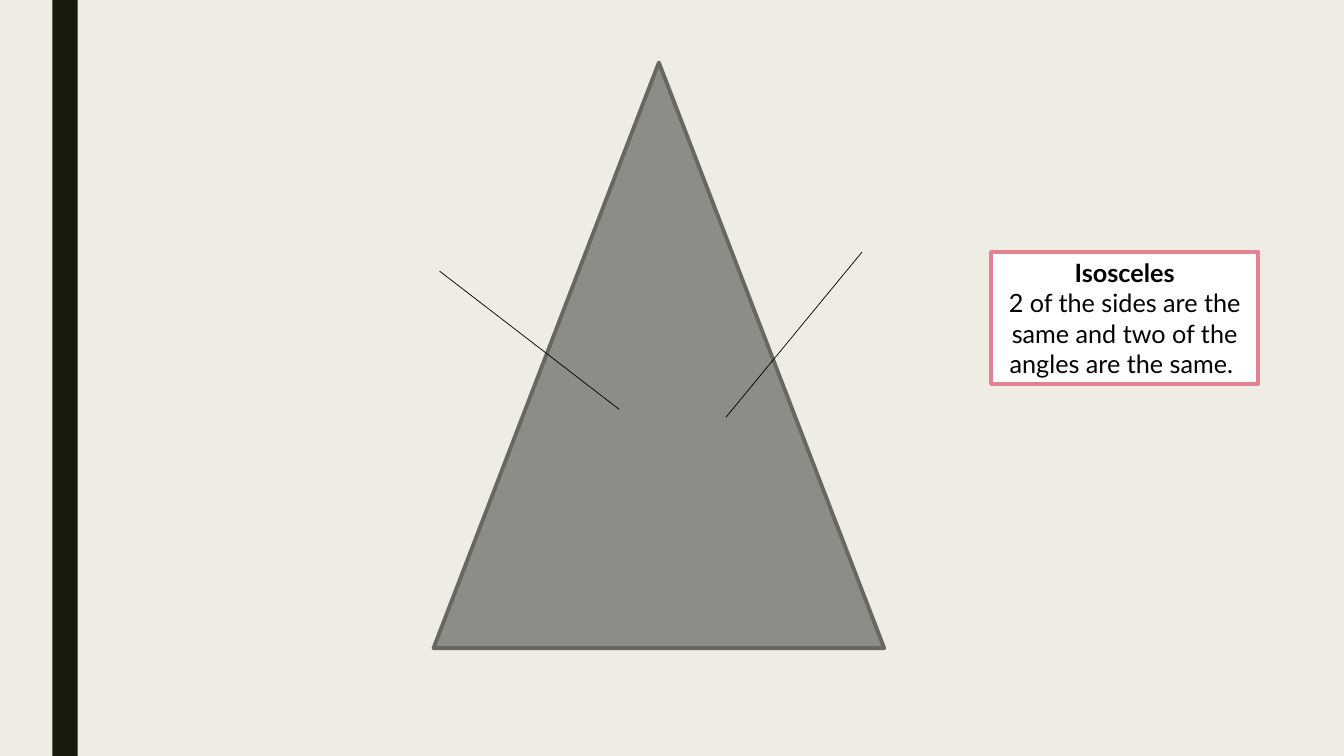
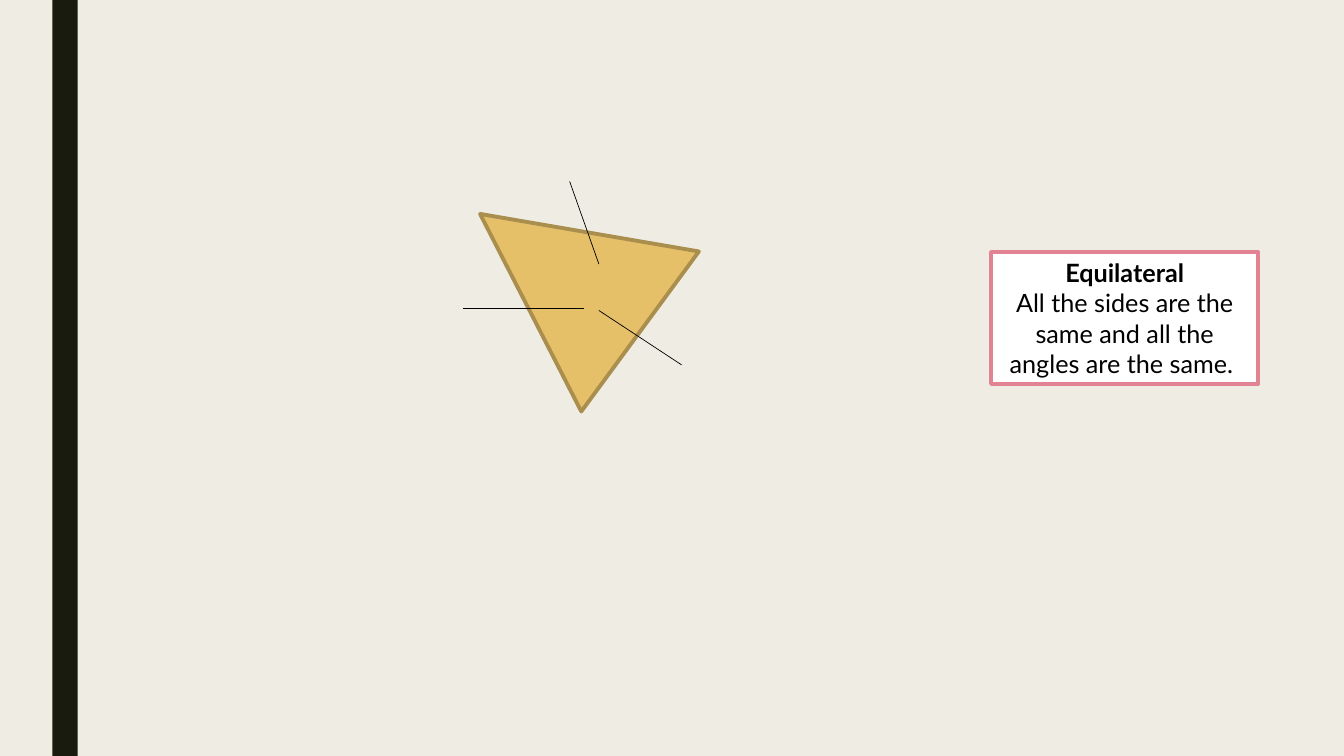
from lxml import etree
from pptx import Presentation
from pptx.dml.color import RGBColor
from pptx.enum.shapes import MSO_CONNECTOR, MSO_SHAPE
from pptx.enum.text import MSO_ANCHOR, PP_ALIGN
from pptx.oxml.ns import qn
from pptx.util import Inches, Pt

RECT = MSO_SHAPE.RECTANGLE
TRIANGLE = MSO_SHAPE.ISOSCELES_TRIANGLE
STRAIGHT = MSO_CONNECTOR.STRAIGHT
CENTER = PP_ALIGN.CENTER
MIDDLE = MSO_ANCHOR.MIDDLE

SLIDE_W, SLIDE_H = 13.33, 7.5
PAPER, BAND, WHITE, BLACK, PINK = "EFEDE3", "191B0E", "FFFFFF", "000000", "E28394"
FONT = "Lato"
OUTLINE = 2.75
BAND_BOX = (0.52, 0, 0.25, SLIDE_H)
LABEL_BOX = (9.83, 2.5, 2.65, 1.31)


def rgb(value):
    return RGBColor.from_string(value)


def add_shape(s, kind, box, fill, line=None, rotation=0):
    sp = s.shapes.add_shape(kind, *map(Inches, box))
    sp.shadow.inherit = False
    sp.fill.solid()
    sp.fill.fore_color.rgb = rgb(fill)
    if line:
        sp.line.color.rgb = rgb(line)
        sp.line.width = Pt(OUTLINE)
    else:
        sp.line.fill.background()
    sp.rotation = rotation
    return sp


def add_tick(s, box, start, end):
    left, top = box[:2]
    points = (left + start[0], top + start[1], left + end[0], top + end[1])
    cxn = s.shapes.add_connector(STRAIGHT, *map(Inches, points))
    cxn.line.color.rgb = rgb(BLACK)
    cxn.line.width = Pt(0.5)
    etree.SubElement(cxn._element.spPr, qn("a:effectLst"))


def add_label(s, box, name, rule):
    tf = add_shape(s, RECT, box, WHITE, PINK).text_frame
    tf.word_wrap = True
    tf.vertical_anchor = MIDDLE
    for i, text in enumerate((name, rule)):
        p = tf.paragraphs[0] if i == 0 else tf.add_paragraph()
        p.text = text
        p.alignment = CENTER
        p.font.name = FONT
        p.font.size = Pt(18)
        p.font.bold = i == 0
        p.font.color.rgb = rgb(BLACK)


def add_triangle(s, box, fill, line, rotation, ticks):
    add_shape(s, TRIANGLE, box, fill, line, rotation)
    for start, end in ticks:
        add_tick(s, box, start, end)


def add_triangle_slide(prs, name, rule, **triangle):
    s = prs.slides.add_slide(prs.slide_layouts[6])
    s.background.fill.solid()
    s.background.fill.fore_color.rgb = rgb(PAPER)
    add_shape(s, RECT, BAND_BOX, BAND)
    add_label(s, LABEL_BOX, name, rule)
    add_triangle(s, **triangle)


def main():
    prs = Presentation()
    prs.slide_width, prs.slide_height = Inches(SLIDE_W), Inches(SLIDE_H)
    add_triangle_slide(
        prs, "Isosceles",
        "2 of the sides are the same and two of the angles are the same. ",
        box=(4.3, 0.62, 4.47, 5.81), fill="8C8D86", line="686863", rotation=0,
        ticks=[((0.06, 2.07), (1.84, 3.44)), ((4.25, 1.88), (2.9, 3.52))])
    add_triangle_slide(
        prs, "Equilateral",
        "All the sides are the same and all the angles are the same. ",
        box=(4.57, 1.72, 1.97, 1.97), fill="E6C069", line="AA8E4E", rotation=306.3,
        ticks=[((1.08, 0.08), (1.37, 0.9)), ((0.02, 1.34), (1.22, 1.34)),
               ((1.37, 1.36), (2.19, 1.9))])
    prs.save("out.pptx")


if __name__ == "__main__":
    main()
